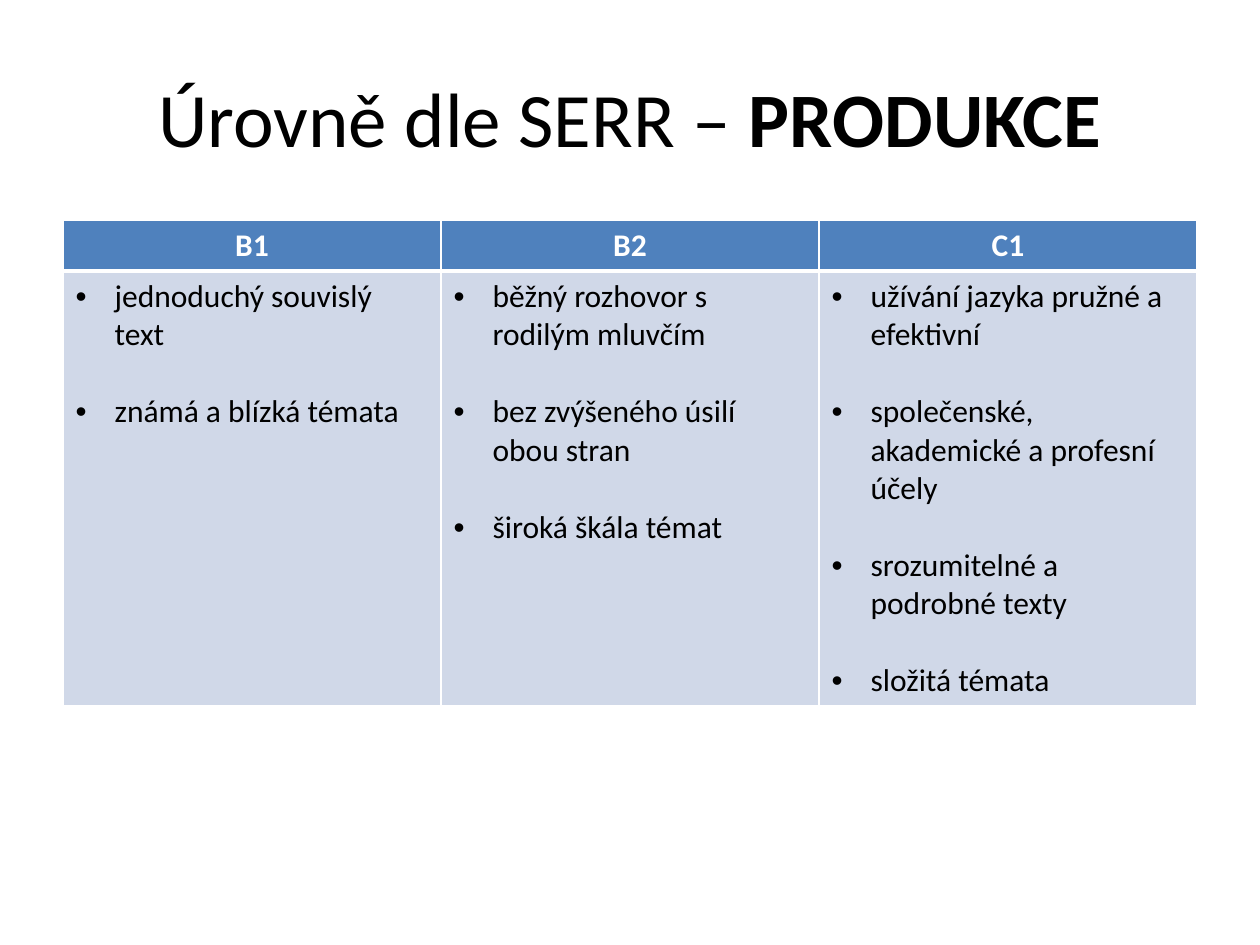
from dataclasses import dataclass

from lxml.etree import SubElement
from pptx import Presentation
from pptx.dml.color import RGBColor
from pptx.enum.text import MSO_ANCHOR, PP_ALIGN
from pptx.oxml.ns import qn
from pptx.util import Inches, Pt


@dataclass(frozen=True)
class Theme:
    font: str = "Calibri"
    text: str = "000000"
    light: str = "FFFFFF"
    header: str = "4F81BD"
    body: str = "D0D8E8"
    title_size: int = 44
    table_size: int = 18
    item_gap: int = 22


THEME = Theme()

LEVELS = {
    "B1": ["jednoduchý souvislý text", "známá a blízká témata"],
    "B2": [
        "běžný rozhovor s rodilým mluvčím",
        "bez zvýšeného úsilí obou stran",
        "široká škála témat",
    ],
    "C1": [
        "užívání jazyka pružné a efektivní",
        "společenské, akademické a profesní účely",
        "srozumitelné a podrobné texty",
        "složitá témata",
    ],
}


def style_run(run, size, color, bold=False):
    run.font.name = THEME.font
    run.font.size = Pt(size)
    run.font.bold = bold
    run.font.color.rgb = RGBColor.from_string(color)


def add_title(slide, plain, emphasis):
    title = slide.shapes.add_textbox(Inches(0.5), Inches(0.3), Inches(9), Inches(1.25))
    frame = title.text_frame
    frame.word_wrap = True
    frame.vertical_anchor = MSO_ANCHOR.MIDDLE
    heading = frame.paragraphs[0]
    heading.alignment = PP_ALIGN.CENTER
    for wording, bold in ((plain, False), (emphasis, True)):
        part = heading.add_run()
        part.text = wording
        style_run(part, THEME.title_size, THEME.text, bold)


def style_cell(cell, fill, bottom_width):
    properties = cell._tc.get_or_add_tcPr()
    for side, width in (("L", 1), ("R", 1), ("T", 1), ("B", bottom_width)):
        border = SubElement(properties, qn(f"a:ln{side}"), w=str(Pt(width)))
        paint = SubElement(border, qn("a:solidFill"))
        SubElement(paint, qn("a:srgbClr"), val=THEME.light)
    cell.fill.solid()
    cell.fill.fore_color.rgb = RGBColor.from_string(fill)


def fill_header(cell, level):
    style_cell(cell, THEME.header, 3)
    cell.text_frame.text = level
    label = cell.text_frame.paragraphs[0]
    label.alignment = PP_ALIGN.CENTER
    style_run(label.runs[0], THEME.table_size, THEME.light, True)


def add_bullet(paragraph):
    indent = Inches(0.31)
    properties = paragraph._p.get_or_add_pPr()
    properties.set("marL", str(indent))
    properties.set("indent", str(-indent))
    SubElement(properties, qn("a:buFont"), typeface="Arial")
    SubElement(properties, qn("a:buChar"), char="•")


def fill_skills(cell, skills):
    style_cell(cell, THEME.body, 1)
    cell.text_frame.text = "\n".join(skills)
    for index, skill in enumerate(cell.text_frame.paragraphs):
        if index:
            skill.space_before = Pt(THEME.item_gap)
        add_bullet(skill)
        style_run(skill.runs[0], THEME.table_size, THEME.text)


def add_levels_table(slide, levels):
    header_height, body_height = Inches(0.4), Inches(3.45)
    table = slide.shapes.add_table(
        2, len(levels), Inches(0.5), Inches(1.75), Inches(9), header_height + body_height
    ).table
    table.horz_banding = False
    table.rows[0].height = header_height
    table.rows[1].height = body_height
    for column, (level, skills) in enumerate(levels.items()):
        fill_header(table.cell(0, column), level)
        fill_skills(table.cell(1, column), skills)


def main():
    presentation = Presentation()
    presentation.slide_width = Inches(10)
    presentation.slide_height = Inches(7.5)
    slide = presentation.slides.add_slide(presentation.slide_layouts[6])
    add_title(slide, "Úrovně dle SERR – ", "PRODUKCE")
    add_levels_table(slide, LEVELS)
    presentation.save("out.pptx")


if __name__ == "__main__":
    main()
